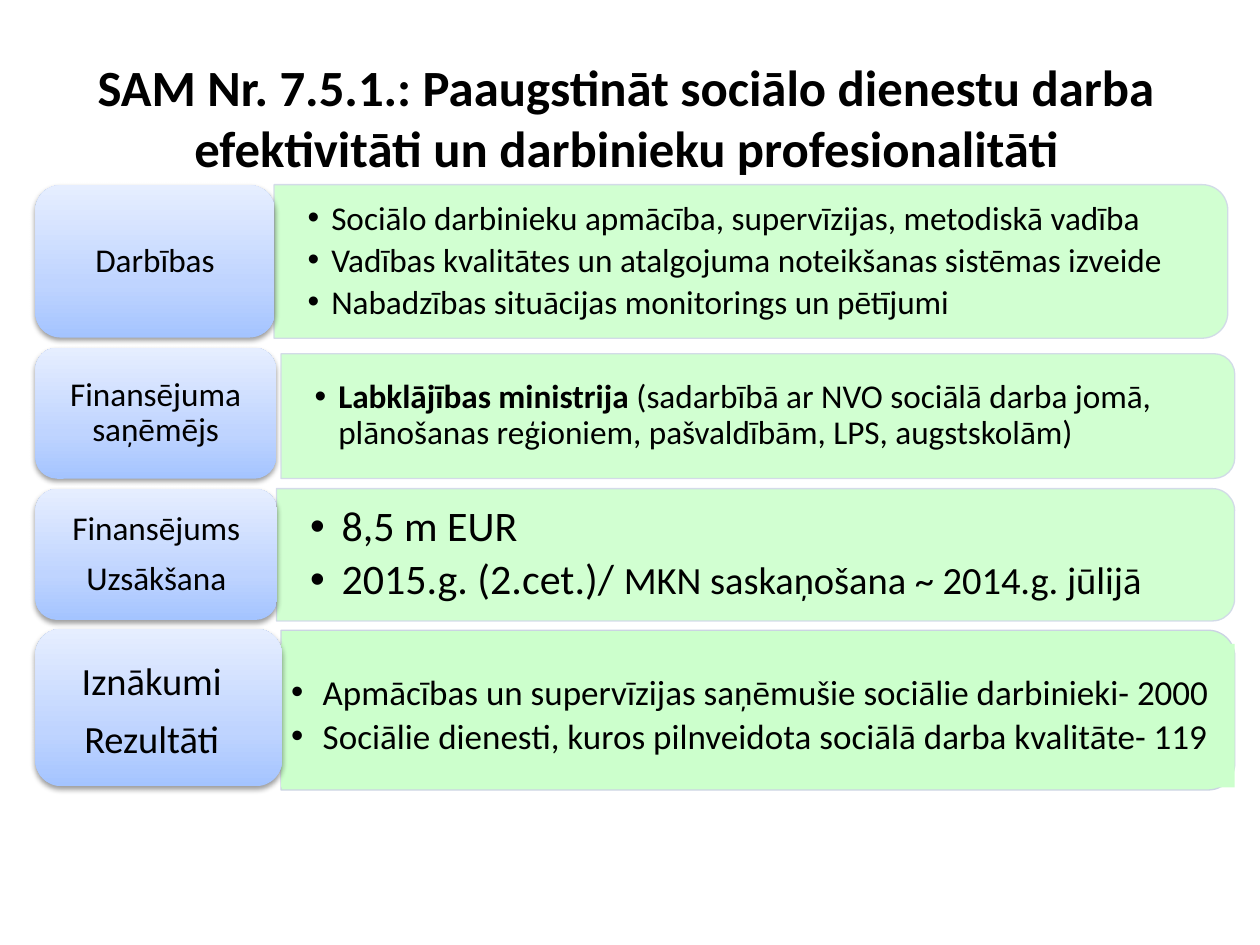
from copy import deepcopy
from lxml.etree import SubElement
from pptx import Presentation
from pptx.dml.color import RGBColor
from pptx.enum.shapes import MSO_SHAPE
from pptx.enum.text import MSO_ANCHOR, PP_ALIGN
from pptx.oxml.ns import qn
from pptx.util import Pt

GREEN = "CCFFCC"
BLUES = [(0, "A4C4FF"), (0.35, "BFD4FF"), (1, "E6EEFF")]


def color(code):
    return RGBColor.from_string(code)


def add(parent, tag, **attrs):
    return SubElement(parent, qn(tag), {k: str(v) for k, v in attrs.items()})


def fade(item, alpha):
    """Set the opacity, in percent, of a solid fill or line."""
    for rgb in item.iter(qn("a:srgbClr")):
        add(rgb, "a:alpha", val=alpha * 1000)


def write(slide, box, paras, size, inset=(7.2, 3.6), indent=0, **style):
    """Add a text box; each paragraph is a list of (text, font values) runs."""
    shape = slide.shapes.add_textbox(*map(Pt, box))
    frame = shape.text_frame
    frame.word_wrap = True
    frame.vertical_anchor = MSO_ANCHOR.MIDDLE
    frame.margin_left = frame.margin_right = Pt(inset[0])
    frame.margin_top = frame.margin_bottom = Pt(inset[1])
    for i, runs in enumerate(paras):
        para = frame.add_paragraph() if i else frame.paragraphs[0]
        for name, value in style.items():
            setattr(para, name, value)
        if indent:
            props = para._p.get_or_add_pPr()
            props.set("marL", str(Pt(indent)))
            props.set("indent", str(-Pt(indent)))
            add(props, "a:buFont", typeface="Arial")
            add(props, "a:buChar", char="•")
        for text, extra in runs:
            run = para.add_run()
            run.text = text
            look = {"name": "Calibri", "size": Pt(size), "bold": False, **extra}
            for name, value in look.items():
                setattr(run.font, name, value)
            run.font.color.rgb = color("000000")
    return shape


def title(slide, box, text):
    write(slide, box, [[(text, {"bold": True})]], 29, alignment=PP_ALIGN.CENTER)


def panel(slide, box, paras, size, indent, solid):
    """Green panel with rounded right corners and a bulleted list."""
    x, y, w, h = box
    # The shape is turned a quarter, so its frame is swapped about its centre
    frame = (x + (w - h) / 2, y + (h - w) / 2, h, w)
    shape = slide.shapes.add_shape(MSO_SHAPE.ROUND_2_SAME_RECTANGLE, *map(Pt, frame))
    shape.rotation = 90
    shape.shadow.inherit = False
    shape.fill.solid()
    shape.fill.fore_color.rgb = color(GREEN)
    shape.line.color.rgb = color("CBD3E3" if solid else "D0D8E8")
    shape.line.width = Pt(0.75)
    if solid:
        area, inset = (x, y + 7.9, w, 82), (5.8, 2.9)
    else:
        fade(shape._element.spPr, 90)
        area, inset = (x, y + 4, w - 4.3, h - 8), (19.2, 9.8)
    text = write(slide, area, paras, size, inset, indent,
                 line_spacing=0.9, space_after=Pt(size * 0.18))
    if solid:
        text.fill.solid()
        text.fill.fore_color.rgb = color(GREEN)


def label(slide, box, lines, size, shift):
    """Blue rounded label with a gradient and a soft shadow."""
    x, y, w, h = box
    shape = slide.shapes.add_shape(MSO_SHAPE.ROUNDED_RECTANGLE, *map(Pt, box))
    shape.line.fill.background()
    shape.fill.gradient()
    shape.fill.gradient_angle = 90
    stops = shape._element.spPr.find(qn("a:gradFill")).find(qn("a:gsLst"))
    stops.insert(1, deepcopy(stops[0]))
    for stop, (place, code) in zip(shape.fill.gradient_stops, BLUES):
        stop.position = place
        stop.color.rgb = color(code)
    shape.shadow.inherit = False
    effects = shape._element.spPr.find(qn("a:effectLst"))
    shade = add(effects, "a:outerShdw", blurRad=Pt(3.1), dist=Pt(1.6),
                dir=5400000, rotWithShape=0)
    add(add(shade, "a:srgbClr", val="000000"), "a:alpha", val=38000)
    dx, dy = shift
    write(slide, (x + 4 + dx, y + 4 + dy, w - 8, h - 8),
          [[(line, {})] for line in lines], size, (5.8, 2.9),
          alignment=PP_ALIGN.CENTER, line_spacing=0.9, space_after=Pt(size * 0.42))


# Each row: label box, lines, size, shift; panel box, paragraphs, size, indent, solid
ROWS = [
    (((20.2, 105.8, 136.8, 87.1), ["Darbības"], 19, (0, 0)),
     ((156.6, 105.5, 545, 87.8),
      [[("Sociālo darbinieku apmācība, supervīzijas, metodiskā vadība", {})],
       [("Vadības kvalitātes un atalgojuma noteikšanas sistēmas izveide", {})],
       [("Nabadzības situācijas monitorings un pētījumi", {})]], 19, 13.5, False)),
    (((20.2, 198.7, 137.5, 74.9), ["Finansējuma saņēmējs"], 19, (0, 0)),
     ((160.6, 202.1, 545, 71.3),
      [[("Labklājības ministrija ", {"bold": True}),
        ("(sadarbībā ar NVO sociālā darba jomā, plānošanas reģioniem, "
         "pašvaldībām, LPS, augstskolām)", {})]], 19, 13.5, False)),
    (((20.2, 279.4, 138.2, 74.9), ["Finansējums", "Uzsākšana"], 19, (0, 0)),
     ((158, 279.2, 547.5, 75.6),
      [[("8,5 m EUR", {})],
       [("2015.g. (2.cet.)/ ", {}),
        ("MKN saskaņošana ~ 2014.g. jūlijā", {"size": Pt(22)})]], 24, 18, False)),
    (((20.2, 359.3, 141, 90), ["Iznākumi", "Rezultāti"], 22, (-4, 2.5)),
     ((160.6, 360.1, 545, 91.3),
      [[("Apmācības un supervīzijas saņēmušie sociālie darbinieki- 2000", {})],
       [("Sociālie dienesti, kuros pilnveidota sociālā darba kvalitāte- 119", {})]],
      20, 18, True)),
]


def main():
    deck = Presentation()
    deck.slide_width, deck.slide_height = Pt(720), Pt(540)
    slide = deck.slides.add_slide(deck.slide_layouts[6])
    title(slide, (20.2, 21.6, 676, 90),
          "SAM Nr. 7.5.1.: Paaugstināt sociālo dienestu darba "
          "efektivitāti un darbinieku profesionalitāti")
    for tag, body in ROWS:
        panel(slide, *body)
        label(slide, *tag)
    deck.save("out.pptx")


if __name__ == "__main__":
    main()
